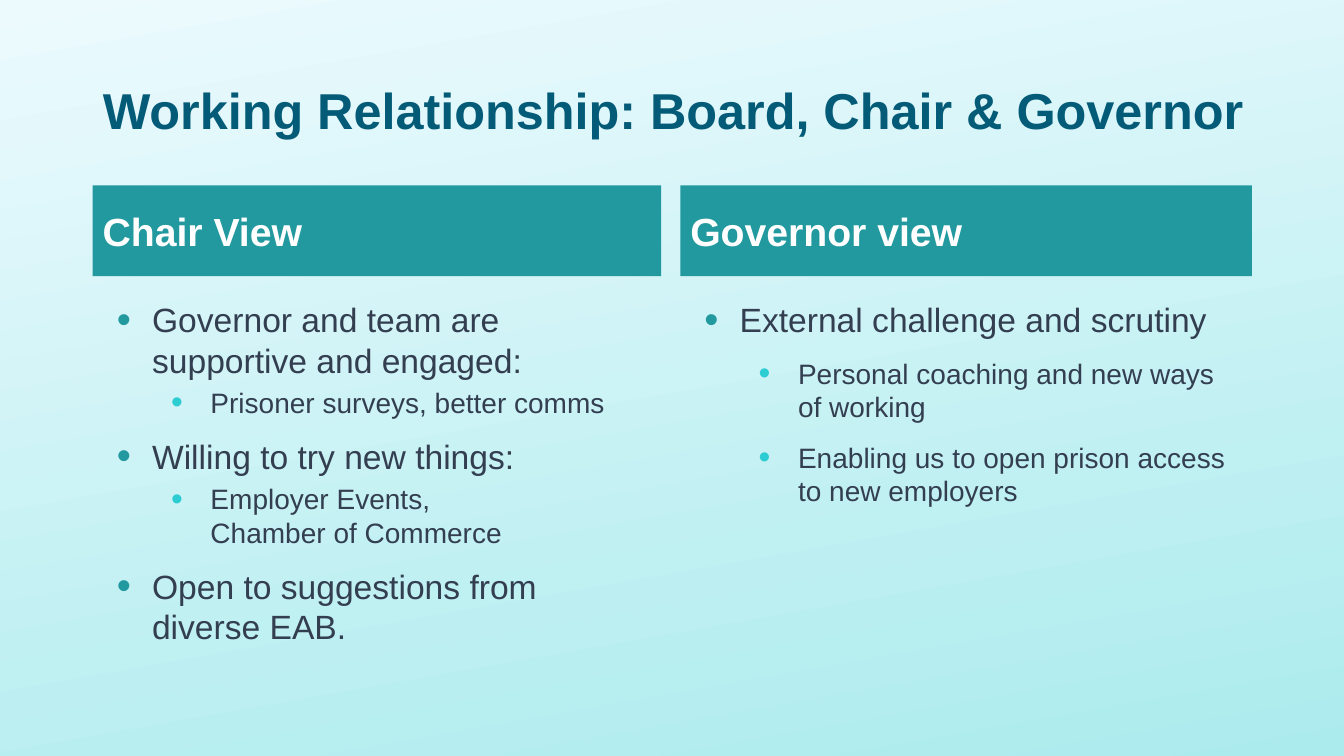
from lxml.etree import SubElement
from pptx import Presentation
from pptx.dml.color import RGBColor
from pptx.enum.shapes import MSO_SHAPE
from pptx.enum.text import MSO_ANCHOR, MSO_AUTO_SIZE, PP_ALIGN
from pptx.oxml.ns import qn
from pptx.util import Pt

NAVY = RGBColor(0x04, 0x5B, 0x77)
TEAL = RGBColor(0x21, 0x99, 0x9E)
AQUA = RGBColor(0x2C, 0xCC, 0xD3)
SLATE = RGBColor(0x33, 0x3F, 0x50)
WHITE = RGBColor(0xFF, 0xFF, 0xFF)
PALE = RGBColor(0xEC, 0xFA, 0xFE)
MINT = RGBColor(0xAB, 0xEB, 0xED)

LEFT = 66.24
LEVELS = [
    {"margin": 35.3, "indent": -25.2, "size": 24, "bullet": TEAL},
    {"margin": 77, "indent": -28.1, "size": 20, "bullet": AQUA},
]
COLUMNS = [
    ("Chair View", LEFT, 406, 0, [
        (0, "Governor and team are supportive and engaged:"),
        (1, "Prisoner surveys, better comms"),
        (0, "Willing to try new things:"),
        (1, "Employer Events,\vChamber of Commerce"),
        (0, "Open to suggestions from diverse EAB."),
    ]),
    ("Governor view", 486, 408.2, 8, [
        (0, "External challenge and scrutiny"),
        (1, "Personal coaching and new ways of working"),
        (1, "Enabling us to open prison access to new employers"),
    ]),
]


def set_font(para, size, color, bold=False):
    para.font.name = "Arial"
    para.font.size = Pt(size)
    para.font.bold = bold
    para.font.color.rgb = color


def paint_background(page):
    fill = page.background.fill
    fill.gradient()
    fill.gradient_angle = 280
    for stop, color, position in zip(fill.gradient_stops, (PALE, MINT), (0, 1)):
        stop.color.rgb = color
        stop.position = position


def set_title(page, text):
    title = page.shapes.title
    title.left, title.top = Pt(LEFT), Pt(28.8)
    title.width, title.height = Pt(866.9), Pt(104.4)
    frame = title.text_frame
    frame.text = text
    frame.auto_size = MSO_AUTO_SIZE.NONE
    frame.vertical_anchor = MSO_ANCHOR.MIDDLE
    para = frame.paragraphs[0]
    para.alignment = PP_ALIGN.LEFT
    para.line_spacing = 0.9
    set_font(para, 36, NAVY, bold=True)


def add_heading(page, text, left, width):
    band = page.shapes.add_shape(
        MSO_SHAPE.RECTANGLE, Pt(left), Pt(132.5), Pt(width), Pt(64.8))
    band.shadow.inherit = False
    band.fill.solid()
    band.fill.fore_color.rgb = TEAL
    band.line.fill.background()
    frame = band.text_frame
    frame.text = text
    frame.vertical_anchor = MSO_ANCHOR.MIDDLE
    para = frame.paragraphs[0]
    para.alignment = PP_ALIGN.LEFT
    para.space_after = Pt(4)
    set_font(para, 28, WHITE, bold=True)


def add_bullet(para, margin, indent, color):
    properties = para._p.get_or_add_pPr()
    properties.set("marL", str(Pt(margin)))
    properties.set("indent", str(Pt(indent)))
    bullet_color = SubElement(properties, qn("a:buClr"))
    SubElement(bullet_color, qn("a:srgbClr"), val=str(color))
    SubElement(properties, qn("a:buSzPct"), val="120000")
    SubElement(properties, qn("a:buFont"), typeface="Arial")
    SubElement(properties, qn("a:buChar"), char="•")


def add_bullet_list(page, items, left, width, sub_space):
    box = page.shapes.add_textbox(Pt(left), Pt(210.2), Pt(width), Pt(277.2))
    frame = box.text_frame
    frame.word_wrap = True
    for number, (level, text) in enumerate(items):
        para = frame.add_paragraph() if number else frame.paragraphs[0]
        para.text = text
        para.level = level
        style = LEVELS[level]
        add_bullet(para, style["margin"], style["indent"], style["bullet"])
        if number:
            para.space_before = Pt(sub_space if level else 8)
        para.space_after = Pt(4)
        set_font(para, style["size"], SLATE)


def main():
    deck = Presentation()
    deck.slide_width, deck.slide_height = Pt(960), Pt(540)
    page = deck.slides.add_slide(deck.slide_layouts[5])
    paint_background(page)
    set_title(page, "Working Relationship: Board, Chair & Governor")
    for heading, left, width, sub_space, items in COLUMNS:
        add_heading(page, heading, left, width)
        add_bullet_list(page, items, left, width, sub_space)
    deck.save("out.pptx")


if __name__ == "__main__":
    main()
